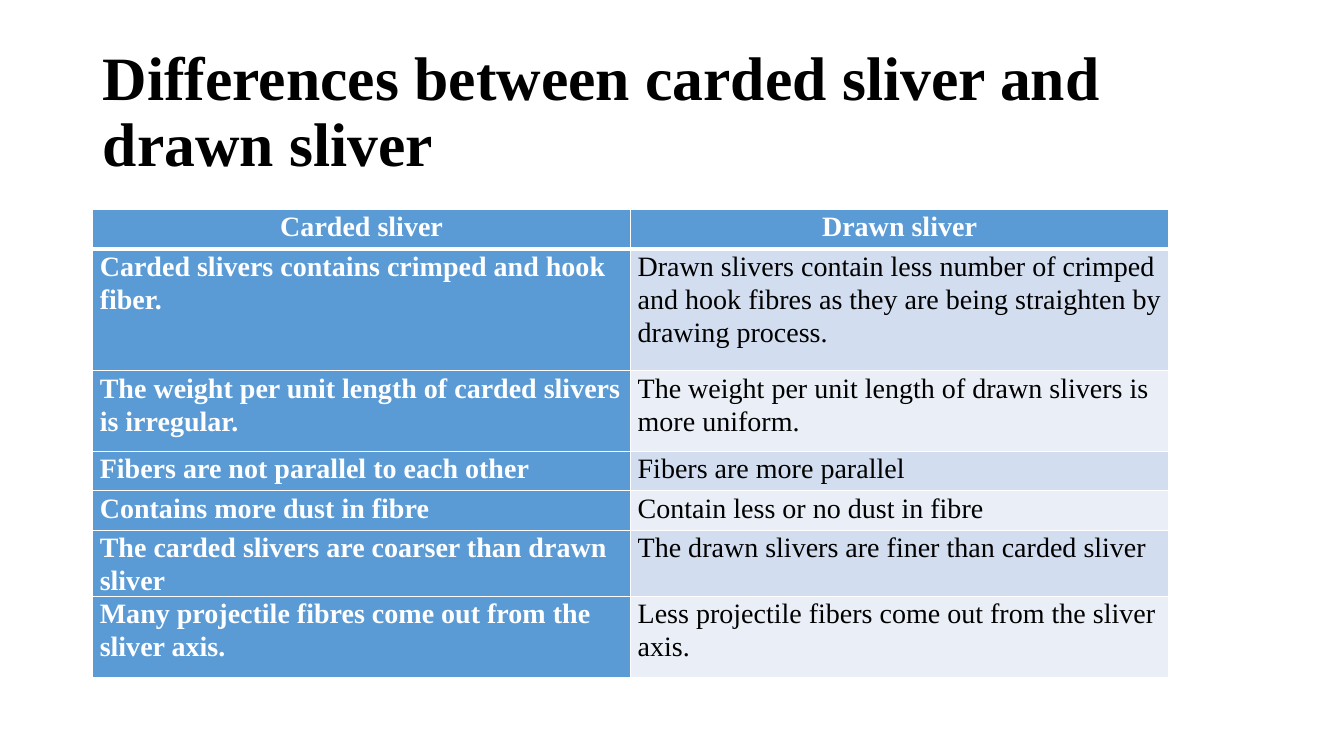
from lxml import etree
from pptx import Presentation
from pptx.dml.color import RGBColor
from pptx.enum.text import MSO_ANCHOR, MSO_AUTO_SIZE, PP_ALIGN
from pptx.oxml.ns import qn
from pptx.util import Pt

PX = 9144
FONT = "Times New Roman"
LEFT, CENTER = PP_ALIGN.LEFT, PP_ALIGN.CENTER
MIDDLE, TOP = MSO_ANCHOR.MIDDLE, MSO_ANCHOR.TOP
NO_FIT = MSO_AUTO_SIZE.NONE
TITLE_ONLY = 5

BLACK = RGBColor(0x00, 0x00, 0x00)
WHITE = RGBColor(0xFF, 0xFF, 0xFF)
BLUE = RGBColor(0x5B, 0x9B, 0xD5)
BANDS = (RGBColor(0xEA, 0xEF, 0xF7), RGBColor(0xD2, 0xDE, 0xEF))

ROW_HEIGHTS = (39, 121, 80, 39, 39, 39, 80)
COMPARISON = (
    ("Carded sliver", "Drawn sliver"),
    ("Carded slivers contains crimped and hook fiber.",
     "Drawn slivers contain less number of crimped and hook fibres as they "
     "are being straighten by drawing process."),
    ("The weight per unit length of carded slivers is irregular.",
     "The weight per unit length of drawn slivers is more uniform."),
    ("Fibers are not parallel to each other", "Fibers are more parallel"),
    ("Contains more dust in fibre", "Contain less or no dust in fibre"),
    ("The carded slivers are coarser than drawn sliver",
     "The drawn slivers are finer than carded sliver"),
    ("Many projectile fibres come out from the sliver axis.",
     "Less projectile fibers come out from the sliver axis."),
)


def apply(target, values):
    for name, value in values.items():
        setattr(target, name, value)


class SlideBuilder:
    """Holds the text style and the slide being built."""

    def __init__(self, presentation):
        self.font = FONT
        self.slide = presentation.slides.add_slide(
            presentation.slide_layouts[TITLE_ONLY])

    def text(self, frame, words, size, color, bold, align, spacing):
        paragraph = frame.paragraphs[0]
        apply(paragraph, {"alignment": align, "line_spacing": spacing})
        run = paragraph.add_run()
        run.text = words
        apply(run.font, {"name": self.font, "size": Pt(size), "bold": bold})
        run.font.color.rgb = color

    def title(self, words, left, top, width, height):
        shape = self.slide.shapes.title
        apply(shape, {"left": left * PX, "top": top * PX,
                      "width": width * PX, "height": height * PX})
        apply(shape.text_frame, {"word_wrap": True, "auto_size": NO_FIT,
                                 "vertical_anchor": MIDDLE})
        self.text(shape.text_frame, words, 44, BLACK, True, LEFT, 0.9)

    def borders(self, cell, bottom):
        properties = cell._tc.get_or_add_tcPr()
        widths = {"a:lnL": 1, "a:lnR": 1, "a:lnT": 1, "a:lnB": bottom}
        for tag, width in widths.items():
            line = etree.SubElement(properties, qn(tag), w=str(Pt(width)))
            fill = etree.SubElement(line, qn("a:solidFill"))
            etree.SubElement(fill, qn("a:srgbClr"), val=str(WHITE))

    def cell(self, cell, words, row, column):
        header = row == 0
        accent = header or column == 0
        apply(cell, {"margin_left": 7 * PX, "margin_right": 7 * PX,
                     "margin_top": 0, "margin_bottom": 0,
                     "vertical_anchor": TOP})
        self.borders(cell, 3 if header else 1)
        cell.fill.solid()
        cell.fill.fore_color.rgb = BLUE if accent else BANDS[row % 2]
        self.text(cell.text_frame, words, 20, WHITE if accent else BLACK,
                  accent, CENTER if header else LEFT, 1.07)

    def table(self, rows, heights, left, top, width):
        frame = self.slide.shapes.add_table(
            len(rows), len(rows[0]), left * PX, top * PX,
            width * PX, sum(heights) * PX)
        table = frame.table
        table.first_col = True
        for row, (texts, height) in enumerate(zip(rows, heights)):
            table.rows[row].height = height * PX
            for column, words in enumerate(texts):
                self.cell(table.cell(row, column), words, row, column)


def main():
    presentation = Presentation()
    apply(presentation, {"slide_width": 1333 * PX, "slide_height": 750 * PX})
    builder = SlideBuilder(presentation)
    builder.title("Differences between carded sliver and drawn sliver",
                  92, 40, 1150, 145)
    builder.table(COMPARISON, ROW_HEIGHTS, 92, 208, 1067)
    presentation.save("out.pptx")


if __name__ == "__main__":
    main()
